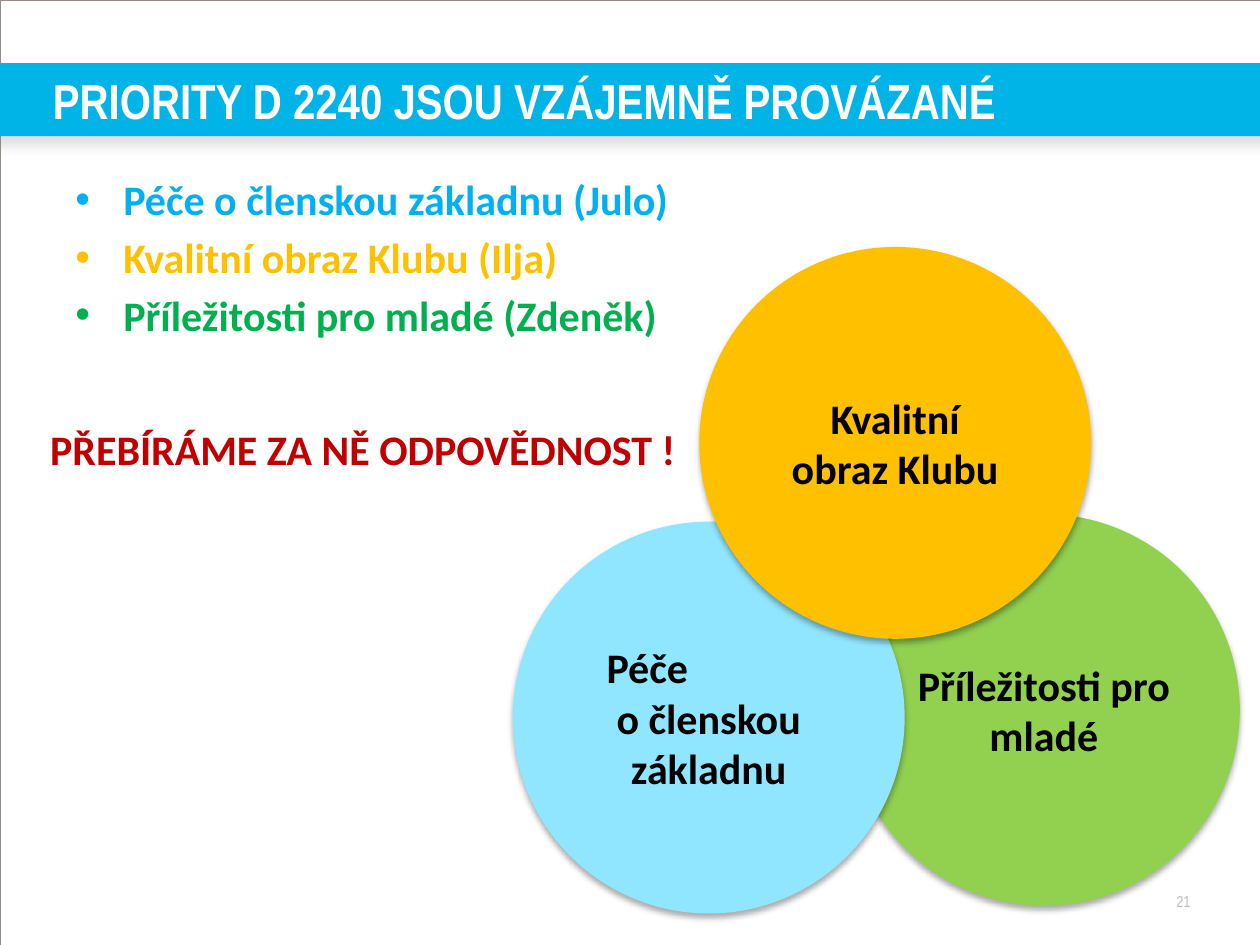
import pptx
import pptx.util
import pptx.dml.color
import pptx.enum.shapes
import pptx.enum.text
import pptx.oxml
import pptx.oxml.ns

Inch, Pt = pptx.util.Inches, pptx.util.Pt
Kind = pptx.enum.shapes.MSO_SHAPE
Align = pptx.enum.text.PP_ALIGN
Mid = pptx.enum.text.MSO_ANCHOR.MIDDLE
Top = pptx.enum.text.MSO_ANCHOR.TOP

HUES = {
    "band": "01B4E7", "white": "FFFFFF", "black": "000000", "edge": "958D85",
    "grey": "BCBDC0", "blue": "00B0F0", "gold": "FFC000", "green": "00B050",
    "red": "C00000", "lime": "92D050", "sky": "90E6FF", "shade": "808080",
}
WIDE, HIGH = 10, 7.5
DISC = 3.11

TITLE = "PRIORITY D 2240 JSOU VZÁJEMNĚ PROVÁZANÉ"
GOALS = [
    ("Péče o členskou základnu (Julo)", "blue"),
    ("Kvalitní obraz Klubu (Ilja)", "gold"),
    ("Příležitosti pro mladé (Zdeněk)", "green"),
]
CLAIM = "PŘEBÍRÁME ZA NĚ ODPOVĚDNOST !"
DISCS = [
    (6.73, 4.08, "lime", [("Příležitosti pro mladé", None)]),
    (4.07, 4.14, "sky", [("Péče", 0.19), ("o členskou základnu", None)]),
    (5.55, 1.96, "gold", [("Kvalitní", None), ("obraz Klubu", None)]),
]
BOLD = {"name": "Calibri", "size": Pt(24), "bold": True}
HEAD = {"name": "Arial Narrow", "size": Pt(28), "bold": True}
FOOT = {"name": "Arial Narrow", "size": Pt(9), "bold": False}
FLUSH = {f"margin_{side}": 0 for side in ("left", "top", "right", "bottom")}


def rgb(hue):
    return pptx.dml.color.RGBColor.from_string(HUES[hue])


def put(obj, vals):
    for key, val in vals.items():
        setattr(obj, key, val)


def place(*box):
    return [Inch(val) for val in box]


def write(para, text, form, hue, align=Align.LEFT):
    para.text = text
    para.alignment = align
    put(para.font, form)
    para.font.color.rgb = rgb(hue)


def lines(frame):
    yield frame.paragraphs[0]
    while True:
        yield frame.add_paragraph()


def shade(shape, hue, alpha, blur, dist):
    shape.shadow.inherit = False
    list_tag = shape._element.spPr.find(pptx.oxml.ns.qn("a:effectLst"))
    list_tag.append(pptx.oxml.parse_xml(
        f'<a:outerShdw {pptx.oxml.ns.nsdecls("a")} blurRad="{Pt(blur)}" '
        f'dist="{Pt(dist)}" dir="5400000" algn="t" rotWithShape="0">'
        f'<a:srgbClr val="{HUES[hue]}"><a:alpha val="{alpha * 1000}"/>'
        f'</a:srgbClr></a:outerShdw>'))


def solid(slide, kind, box, hue):
    shape = slide.shapes.add_shape(kind, *place(*box))
    shape.fill.solid()
    shape.fill.fore_color.rgb = rgb(hue)
    shape.line.fill.background()
    return shape


def label(slide, box, **vals):
    frame = slide.shapes.add_textbox(*place(*box)).text_frame
    put(frame, {"word_wrap": True, "vertical_anchor": Top, **vals})
    return frame


def bullet(para):
    props = para._p.get_or_add_pPr()
    put_in = Inch(0.38)
    props.set("marL", str(put_in))
    props.set("indent", str(-put_in))
    props.append(pptx.oxml.parse_xml(
        f'<a:buFont {pptx.oxml.ns.nsdecls("a")} typeface="Arial"/>'))
    props.append(pptx.oxml.parse_xml(
        f'<a:buChar {pptx.oxml.ns.nsdecls("a")} char="•"/>'))


def main():
    deck = pptx.Presentation()
    put(deck, {"slide_width": Inch(WIDE), "slide_height": Inch(HIGH)})
    slide = deck.slides.add_slide(deck.slide_layouts[5])

    edge = slide.shapes.add_shape(Kind.RECTANGLE, *place(0, 0, WIDE, HIGH))
    edge.shadow.inherit = False
    edge.fill.background()
    edge.line.color.rgb = rgb("edge")
    edge.line.width = Pt(0.13)

    band = solid(slide, Kind.RECTANGLE, (-0.08, 0.5, WIDE + 0.17, 0.58), "band")
    shade(band, "shade", 25, 7, 4.8)

    page = label(slide, (8.45, 7.08, 1, 0.15), **FLUSH)
    write(page.paragraphs[0], "21", FOOT, "grey", Align.RIGHT)

    title = slide.shapes.title
    put(title, dict(zip(("left", "top", "width", "height"),
                        place(0.42, 0.5, WIDE - 0.42, 0.58))))
    put(title.text_frame, {**FLUSH, "vertical_anchor": Mid, "word_wrap": True})
    write(title.text_frame.paragraphs[0], TITLE, HEAD, "white")
    slide.shapes._spTree.append(title._element)

    goals = label(slide, (0.5, 1.33, 7.65, 1.55))
    for row, ((text, hue), para) in enumerate(zip(GOALS, lines(goals))):
        bullet(para)
        write(para, text, BOLD, hue)
        if row:
            para.space_before = Pt(4.2)

    claim = label(slide, (0.3, 3.31, 5.33, 0.58))
    write(claim.paragraphs[0], CLAIM, BOLD, "red")

    for left, top, hue, texts in DISCS:
        disc = solid(slide, Kind.OVAL, (left, top, DISC, DISC), hue)
        shade(disc, "black", 32, 3.5, 2.2)
        put(disc.text_frame, {"word_wrap": True, "vertical_anchor": Mid})
        for (text, shift), para in zip(texts, lines(disc.text_frame)):
            write(para, text, BOLD, "black", Align.LEFT if shift else Align.CENTER)
            if shift:
                para._p.get_or_add_pPr().set("marL", str(Inch(shift)))

    deck.save("out.pptx")


if __name__ == "__main__":
    main()
